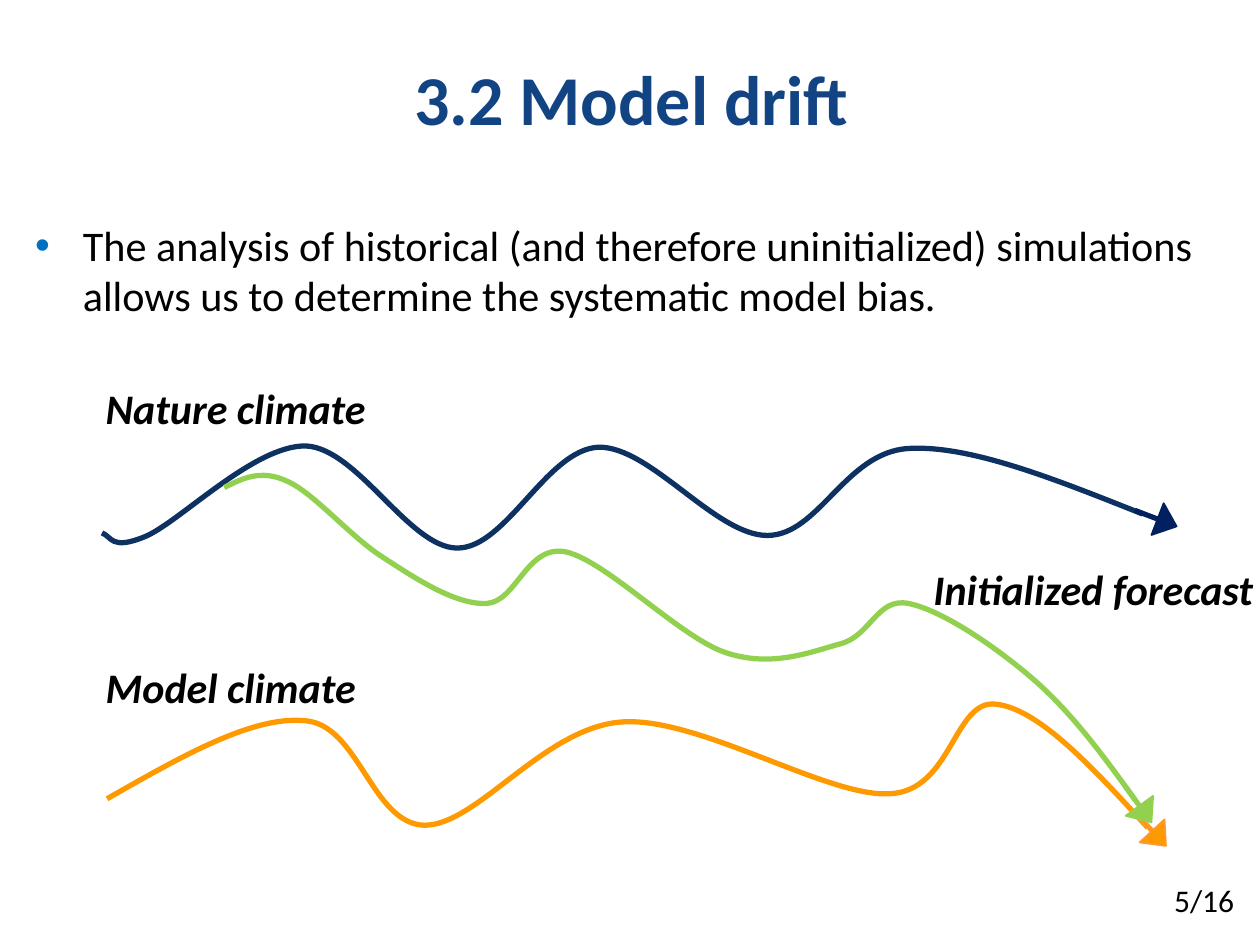
from dataclasses import dataclass

from pptx import Presentation
from pptx import util as u
from pptx.dml.color import RGBColor
from pptx.enum import shapes, text
from pptx.oxml import parse_xml
from pptx.oxml.ns import nsdecls, qn

COLUMNS, ROWS = 10, 7.5
CELL = u.Inches(1)
FONT = "Calibri"
BLACK, TITLE_BLUE, BULLET_BLUE = "000000", "124484", "0070C0"
NAVY, DEEP_NAVY, GREEN, ORANGE, AMBER = "0D3262", "002060", "92D050", "FF9900", "FF9933"

Point = tuple[float, float]


@dataclass
class Caption:
    wording: str
    column: float
    row: float
    columns: float
    rows: float
    size: float = 24
    colour: str = BLACK
    bold: bool = False
    italic: bool = False
    centred: bool = False
    line_spacing: float = 1.0
    top_inset: float = 0.05


@dataclass
class Curve:
    colour: str
    start: Point
    bends: list[tuple[Point, Point, Point]]


@dataclass
class Tip:
    column: float
    row: float
    angle: float
    fill: str
    outline: str


def cells(count: float) -> int:
    return round(count * CELL)


def colour(value: str) -> RGBColor:
    return RGBColor.from_string(value)


def draw_caption(slide, caption: Caption):
    box = slide.shapes.add_textbox(
        *map(cells, (caption.column, caption.row, caption.columns, caption.rows))
    )
    frame = box.text_frame
    frame.word_wrap = True
    frame.vertical_anchor = text.MSO_ANCHOR.TOP
    frame.margin_top = cells(caption.top_inset)
    paragraph = frame.paragraphs[0]
    paragraph.line_spacing = caption.line_spacing
    paragraph.alignment = text.PP_ALIGN.CENTER if caption.centred else text.PP_ALIGN.LEFT
    run = paragraph.add_run()
    run.text = caption.wording
    run.font.name = FONT
    run.font.size = u.Pt(caption.size)
    run.font.bold = caption.bold
    run.font.italic = caption.italic
    run.font.color.rgb = colour(caption.colour)
    return paragraph


def add_bullet(paragraph, hang: float, tint: str) -> None:
    properties = paragraph._p.get_or_add_pPr()
    properties.set("marL", str(cells(hang)))
    properties.set("indent", str(-cells(hang)))
    for markup in (
        f'<a:buClr {nsdecls("a")}><a:srgbClr val="{tint}"/></a:buClr>',
        f'<a:buFont {nsdecls("a")} typeface="Arial"/>',
        f'<a:buChar {nsdecls("a")} char="•"/>',
    ):
        properties.append(parse_xml(markup))


def draw_curve(slide, curve: Curve) -> None:
    controls = [tuple(map(cells, point)) for bend in curve.bends for point in bend]
    builder = slide.shapes.build_freeform(*map(cells, curve.start))
    builder.add_line_segments(controls, close=False)
    wave = builder.convert_to_shape()
    segments = wave._element.xpath(".//a:lnTo")
    for first in range(0, len(segments), 3):
        bend = parse_xml(f'<a:cubicBezTo {nsdecls("a")}/>')
        segments[first].addprevious(bend)
        for segment in segments[first:first + 3]:
            bend.append(segment.find(qn("a:pt")))
            segment.getparent().remove(segment)
    wave.shadow.inherit = False
    wave.fill.background()
    wave.line.color.rgb = colour(curve.colour)
    wave.line.width = u.Pt(3)


def draw_tip(slide, tip: Tip) -> None:
    arrow = slide.shapes.add_shape(
        shapes.MSO_SHAPE.RIGHT_ARROW, *map(cells, (tip.column, tip.row, 0.35, 0.27))
    )
    arrow.adjustments[0] = 0.1
    arrow.adjustments[1] = 0.6
    arrow.rotation = tip.angle
    arrow.shadow.inherit = False
    arrow.fill.solid()
    arrow.fill.fore_color.rgb = colour(tip.fill)
    arrow.line.color.rgb = colour(tip.outline)
    arrow.line.width = u.Pt(1)


STATEMENT = Caption(
    "The analysis of historical (and therefore uninitialized) simulations "
    "allows us to determine the systematic model bias.",
    0.18, 1.29, 9.53, 1.13, size=24.1, top_inset=0.45,
)
CAPTIONS = [
    Caption("3.2 Model drift", 0.51, 0.47, 9, 0.92, size=40, colour=TITLE_BLUE,
            bold=True, centred=True, line_spacing=0.9),
    Caption("5/16", 9.22, 6.94, 0.78, 0.4, size=18),
    Caption("Model climate", 0.74, 5.2, 2.41, 0.5, bold=True, italic=True),
    Caption("Nature climate", 0.74, 2.99, 2.41, 0.5, bold=True, italic=True),
    Caption("Initialized forecast", 7.31, 4.42, 2.83, 0.5, bold=True, italic=True),
]
NATURE = Curve(NAVY, (9.07, 4.08), [
    ((8.39, 3.81), (7.7, 3.53), (7.21, 3.56)),
    ((6.71, 3.59), (6.5, 4.25), (6.09, 4.25)),
    ((5.68, 4.25), (5.16, 3.54), (4.75, 3.55)),
    ((4.34, 3.57), (4.02, 4.35), (3.63, 4.35)),
    ((3.25, 4.35), (2.84, 3.56), (2.43, 3.54)),
    ((2.02, 3.53), (1.42, 4.15), (1.15, 4.26)),
    ((0.88, 4.37), (0.89, 4.26), (0.81, 4.23)),
])
MODEL = Curve(ORANGE, (0.85, 6.34), [
    ((1.43, 6.01), (2, 5.68), (2.42, 5.72)),
    ((2.85, 5.75), (2.95, 6.54), (3.37, 6.55)),
    ((3.79, 6.55), (4.32, 5.77), (4.94, 5.73)),
    ((5.55, 5.69), (6.57, 6.33), (7.06, 6.3)),
    ((7.56, 6.28), (7.57, 5.54), (7.91, 5.59)),
    ((8.25, 5.63), (8.68, 6.1), (9.11, 6.57)),
])
FORECAST = Curve(GREEN, (1.78, 3.87), [
    ((1.92, 3.8), (2.07, 3.72), (2.28, 3.82)),
    ((2.49, 3.91), (2.79, 4.27), (3.05, 4.43)),
    ((3.31, 4.6), (3.62, 4.8), (3.86, 4.79)),
    ((4.1, 4.78), (4.18, 4.32), (4.49, 4.38)),
    ((4.81, 4.45), (5.4, 5.06), (5.76, 5.18)),
    ((6.12, 5.3), (6.42, 5.18), (6.67, 5.11)),
    ((6.91, 5.05), (6.96, 4.74), (7.21, 4.79)),
    ((7.47, 4.84), (7.9, 5.13), (8.2, 5.39)),
    ((8.5, 5.65), (8.76, 6), (9.01, 6.35)),
])
TIPS = [
    Tip(8.96, 6.45, 47.3, ORANGE, AMBER),
    Tip(9, 3.98, 21, DEEP_NAVY, DEEP_NAVY),
    Tip(8.86, 6.25, 54, GREEN, GREEN),
]


def main() -> None:
    deck = Presentation()
    deck.slide_width, deck.slide_height = cells(COLUMNS), cells(ROWS)
    slide = deck.slides.add_slide(deck.slide_layouts[6])
    for curve in (NATURE, MODEL, FORECAST):
        draw_curve(slide, curve)
    for tip in TIPS:
        draw_tip(slide, tip)
    add_bullet(draw_caption(slide, STATEMENT), 0.38, BULLET_BLUE)
    for caption in CAPTIONS:
        draw_caption(slide, caption)
    deck.save("out.pptx")


if __name__ == "__main__":
    main()
